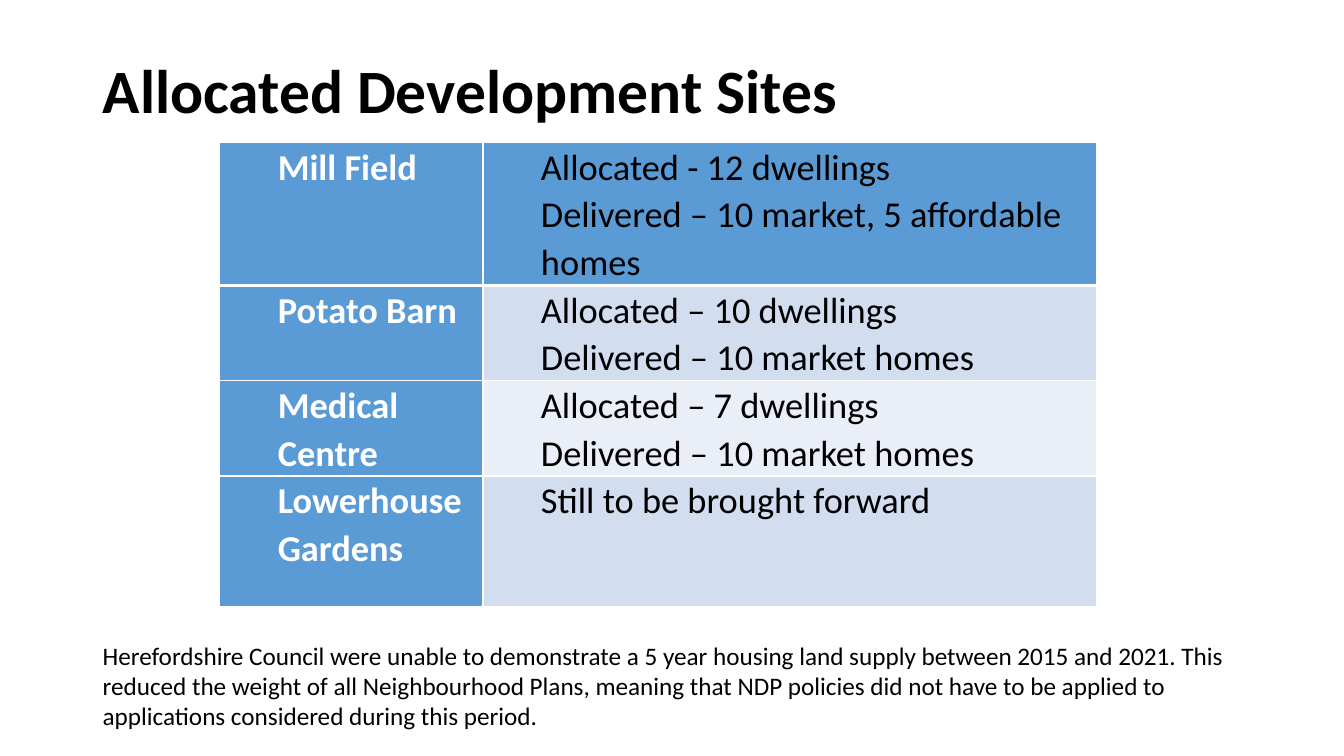
from lxml.etree import SubElement
from pptx import Presentation
from pptx.dml.color import RGBColor
from pptx.enum.text import MSO_ANCHOR, PP_ALIGN
from pptx.oxml.ns import qn
from pptx.util import Pt

HUES = {"ink": "000000", "white": "FFFFFF", "blue": "5B9BD5",
        "mid": "D2DEEF", "pale": "EAEFF7"}
SITES = [
    ("Mill Field", "Allocated - 12 dwellings\nDelivered – 10 market, 5 affordable homes", "blue", 101),
    ("Potato Barn", "Allocated – 10 dwellings\nDelivered – 10 market homes", "mid", 66),
    ("Medical Centre", "Allocated – 7 dwellings\nDelivered – 10 market homes", "pale", 66),
    ("Lowerhouse Gardens", "Still to be brought forward", "mid", 93.5),
]


def style(para, size, hue="ink", bold=False):
    para.alignment = PP_ALIGN.LEFT
    for run in para.runs:
        run.font.name = "Calibri"
        run.font.size = Pt(size)
        run.font.bold = bold
        run.font.color.rgb = RGBColor.from_string(HUES[hue])


def edge(cell, side, width):
    """Draw one white border; side is L, R, T or B."""
    line = SubElement(cell._tc.get_or_add_tcPr(), qn("a:ln" + side), w=str(Pt(width)))
    fill = SubElement(line, qn("a:solidFill"))
    SubElement(fill, qn("a:srgbClr"), val=HUES["white"])


deck = Presentation()
deck.slide_width, deck.slide_height = Pt(960), Pt(540)
slide = deck.slides.add_slide(deck.slide_layouts[5])

title = slide.shapes.title
title.left, title.top, title.width, title.height = Pt(66.25), Pt(0), Pt(828), Pt(133)
title.text_frame.text = "Allocated Development Sites"
title.text_frame.vertical_anchor = MSO_ANCHOR.MIDDLE
title.text_frame.paragraphs[0].line_spacing = 0.9
style(title.text_frame.paragraphs[0], 44, bold=True)

frame = slide.shapes.add_table(len(SITES), 2, Pt(157), Pt(101.75), Pt(626), Pt(326.5))
table = frame.table
table.columns[0].width, table.columns[1].width = Pt(188), Pt(438)
for row, (name, text, tint, height) in enumerate(SITES):
    table.rows[row].height = Pt(height)
    for col, words in enumerate((name, text)):
        cell = table.cell(row, col)
        cell.margin_left = cell.margin_right = Pt(5.4)
        cell.margin_top = cell.margin_bottom = Pt(0)
        edge(cell, "L", 1)
        edge(cell, "R", 1)
        edge(cell, "T", 3 if row == 1 else 1)
        edge(cell, "B", 3 if row == 0 else 1)
        cell.fill.solid()
        cell.fill.fore_color.rgb = RGBColor.from_string(HUES[tint if col else "blue"])
        cell.text_frame.text = words
        for para in cell.text_frame.paragraphs:
            para.line_spacing = 1.07
            para._p.get_or_add_pPr().set("marL", str(Pt(36)))
            style(para, 26, "ink" if col else "white", bold=col == 0)

note = slide.shapes.add_textbox(Pt(66.25), Pt(453.6), Pt(847.5), Pt(94.3)).text_frame
note.word_wrap = True
note.text = (
    "Herefordshire Council were unable to demonstrate a 5 year housing land supply "
    "between 2015 and 2021. This reduced the weight of all Neighbourhood Plans, "
    "meaning that NDP policies did not have to be applied to applications "
    "considered during this period.")
style(note.paragraphs[0], 18)

deck.save("out.pptx")
